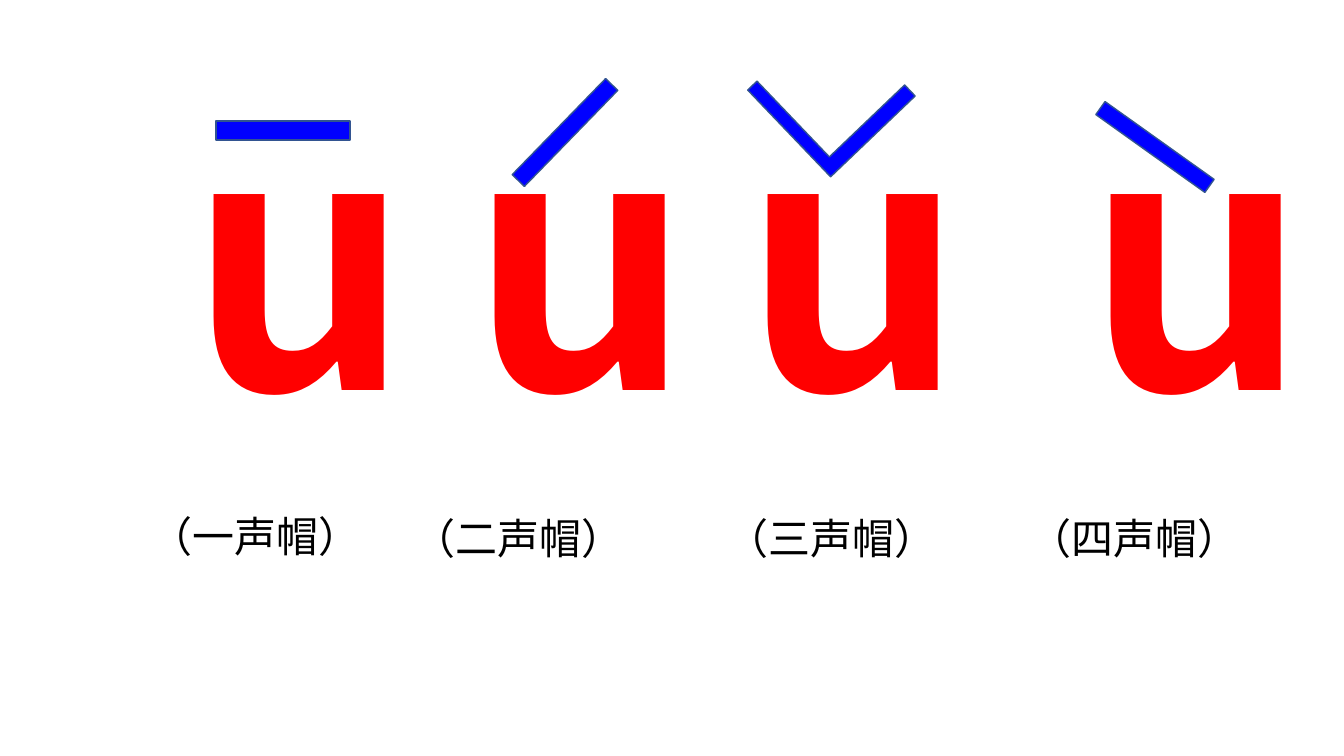
"""Build a slide showing the four tone marks above the letter u."""
from lxml import etree
from pptx import Presentation
from pptx.dml.color import RGBColor
from pptx.enum.shapes import MSO_SHAPE
from pptx.enum.text import MSO_AUTO_SIZE
from pptx.oxml.ns import qn
from pptx.util import Emu, Pt

RECT, CORNER = MSO_SHAPE.RECTANGLE, MSO_SHAPE.CORNER
GROW = MSO_AUTO_SIZE.SHAPE_TO_FIT_TEXT
FONT = "Noto Sans CJK SC"
COLORS = {"caption": "000000", "letter": "FF0000", "hat": "0000FF", "edge": "325491"}
LETTER, LETTER_Y, LETTER_SIZE = "u", 36, (227, 434)
CAPTION_SIZE = (233, 61)

TONES = [
    {"caption": "（一声帽）", "caption_at": (141, 506), "letter_x": 179,
     "hat": (RECT, (216, 121, 134, 19), 0, ())},
    {"caption": "（二声帽）", "caption_at": (404, 508), "letter_x": 460,
     "hat": (RECT, (498, 124, 134, 17), 314.2, ())},
    {"caption": "（三声帽）", "caption_at": (717, 508), "letter_x": 733,
     "hat": (CORNER, (773, 33, 117, 120), 316.3, (0.13, 0.11))},
    {"caption": "（四声帽）", "caption_at": (1020, 508), "letter_x": 1076,
     "hat": (RECT, (1088, 139, 134, 16), 35.5, ())},
]


def px(n):
    return Emu(round(n * 914400 / 100.8))


def rgb(name):
    return RGBColor.from_string(COLORS[name])


def add_text(shapes, text, box, size, color, bold=False):
    tf = shapes.add_textbox(*map(px, box)).text_frame
    tf.word_wrap = False
    tf.auto_size = GROW
    p = tf.paragraphs[0]
    p.text = text
    p.font.size, p.font.bold, p.font.name = Pt(size), bold, FONT
    p.font.color.rgb = rgb(color)
    props = p._p.pPr.find(qn("a:defRPr"))
    etree.SubElement(props, qn("a:ea")).set("typeface", FONT)


def add_hat(shapes, kind, box, angle, adjustments):
    sp = shapes.add_shape(kind, *map(px, box))
    sp.rotation = angle
    for i, value in enumerate(adjustments):
        sp.adjustments[i] = value
    sp.shadow.inherit = False
    sp.fill.solid()
    sp.fill.fore_color.rgb = rgb("hat")
    sp.line.color.rgb = rgb("edge")
    sp.line.width = Pt(1)


def main():
    prs = Presentation()
    prs.slide_width, prs.slide_height = px(1344), px(756)
    s = prs.slides.add_slide(prs.slide_layouts[6])
    for tone in TONES:
        add_text(s.shapes, tone["caption"], tone["caption_at"] + CAPTION_SIZE, 30, "caption")
    for tone in TONES:
        group = s.shapes.add_group_shape()
        add_hat(group.shapes, *tone["hat"])
        add_text(group.shapes, LETTER, (tone["letter_x"], LETTER_Y) + LETTER_SIZE,
                 250, "letter", bold=True)
    prs.save("out.pptx")


if __name__ == "__main__":
    main()
